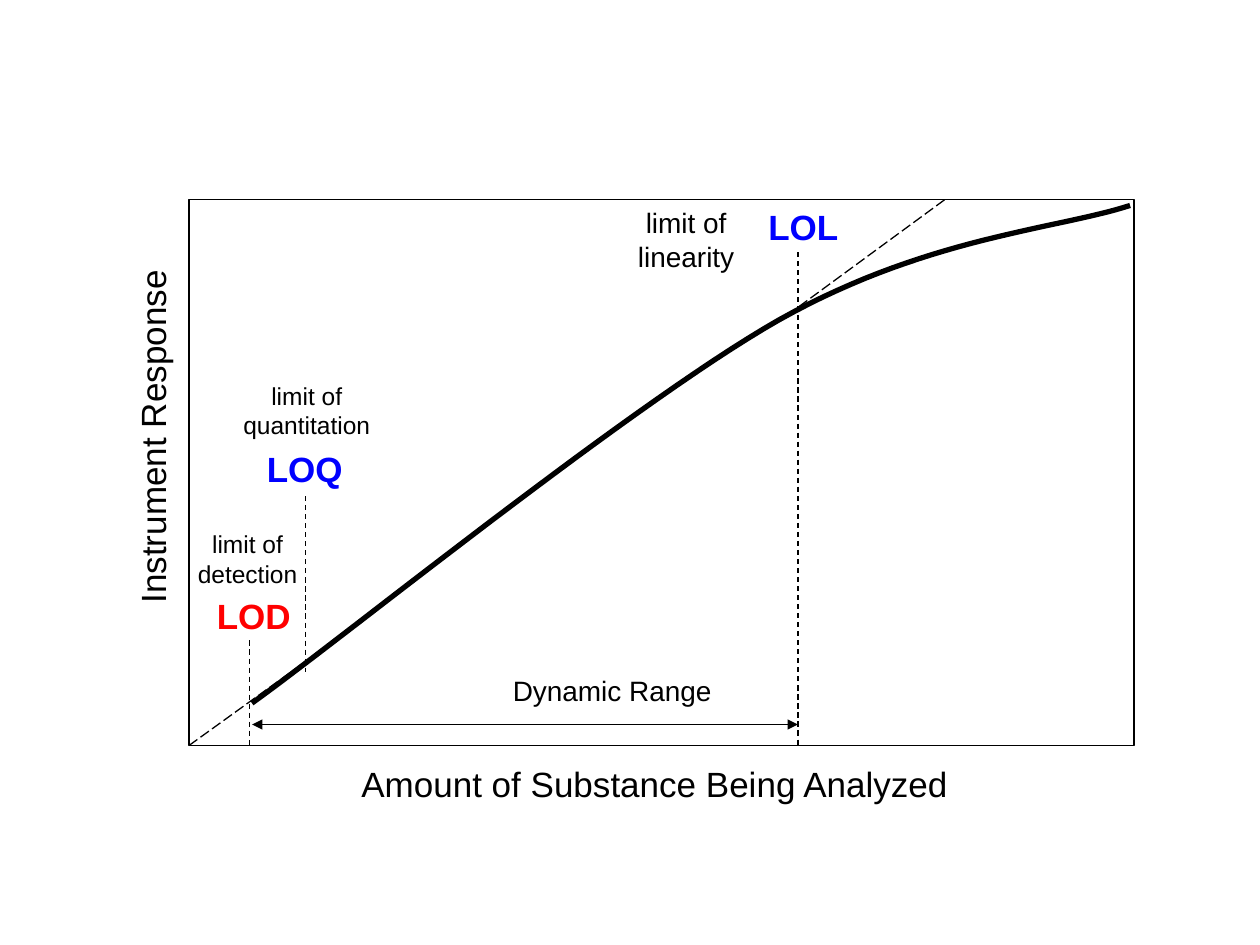
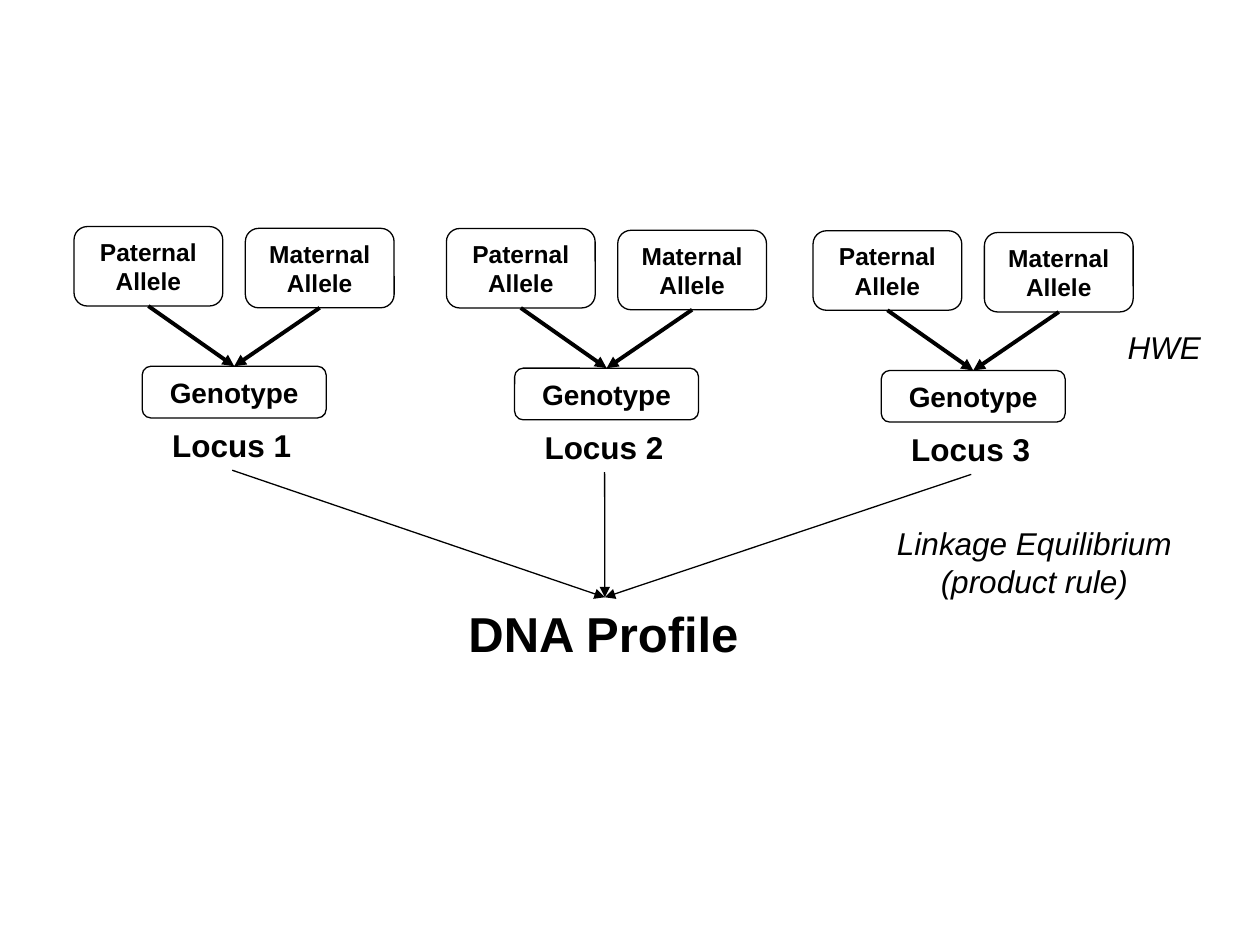
from lxml import etree
from pptx import Presentation
from pptx.dml.color import RGBColor
from pptx.enum.dml import MSO_LINE
from pptx.enum.shapes import MSO_CONNECTOR, MSO_SHAPE
from pptx.enum.text import MSO_ANCHOR, MSO_AUTO_SIZE, PP_ALIGN
from pptx.oxml.ns import qn
from pptx.util import Pt

RECTANGLE = MSO_SHAPE.RECTANGLE
ROUNDED = MSO_SHAPE.ROUNDED_RECTANGLE
STRAIGHT = MSO_CONNECTOR.STRAIGHT
DASH = MSO_LINE.DASH
LONG_DASH = MSO_LINE.LONG_DASH
LEFT, CENTER = PP_ALIGN.LEFT, PP_ALIGN.CENTER
MIDDLE = MSO_ANCHOR.MIDDLE
FIT = MSO_AUTO_SIZE.SHAPE_TO_FIT_TEXT
TOP_SIDE, BOTTOM_SIDE = 0, 2

BLACK, WHITE, BLUE, RED = "000000", "FFFFFF", "0000FF", "FF0000"
BLANK_LAYOUT = 6


def color(hex_value):
    return RGBColor.from_string(hex_value)


def bezier(start, first, second, end, steps=30):
    for step in range(1, steps + 1):
        t = step / steps
        weights = ((1 - t) ** 3, 3 * t * (1 - t) ** 2, 3 * t * t * (1 - t), t ** 3)
        points = (start, first, second, end)
        yield tuple(sum(w * point[axis] for w, point in zip(weights, points))
                    for axis in (0, 1))


class Diagram:
    font = "Arial"
    thin = 0.75

    def __init__(self):
        self.presentation = Presentation()
        self.presentation.slide_width = Pt(720)
        self.presentation.slide_height = Pt(540)
        self.slide = None

    def new_slide(self):
        layout = self.presentation.slide_layouts[BLANK_LAYOUT]
        self.slide = self.presentation.slides.add_slide(layout)

    def set_text(self, shape, text, size, ink=BLACK, bold=False, italic=False, wrap=True):
        text_frame = shape.text_frame
        text_frame.text = text
        text_frame.word_wrap = wrap
        text_frame.auto_size = FIT
        paragraph = text_frame.paragraphs[0]
        paragraph.alignment = CENTER if wrap else LEFT
        for run in paragraph.runs:
            run.font.name = self.font
            run.font.size = Pt(size)
            run.font.bold = bold
            run.font.italic = italic
            run.font.color.rgb = color(ink)

    def label(self, text, left, top, width, height, size, wrap=False, **style):
        shape = self.slide.shapes.add_textbox(Pt(left), Pt(top), Pt(width), Pt(height))
        self.set_text(shape, text, size, wrap=wrap, **style)
        return shape

    def outline(self, shape, weight):
        shape.shadow.inherit = False
        shape.fill.background()
        shape.line.color.rgb = color(BLACK)
        shape.line.width = Pt(weight)

    def box(self, kind, left, top, width, height):
        shape = self.slide.shapes.add_shape(kind, Pt(left), Pt(top), Pt(width), Pt(height))
        self.outline(shape, self.thin)
        return shape

    def rounded_box(self, text, left, top, width, height, size):
        shape = self.box(ROUNDED, left, top, width, height)
        self.set_text(shape, text, size, bold=True)
        shape.text_frame.vertical_anchor = MIDDLE
        return shape

    def curve(self, points, weight):
        builder = self.slide.shapes.build_freeform(*map(Pt, points[0]))
        builder.add_line_segments([(Pt(x), Pt(y)) for x, y in points[1:]], close=False)
        self.outline(builder.convert_to_shape(), weight)

    def line(self, start, end, weight=thin, dash=None, arrows=()):
        connector = self.slide.shapes.add_connector(
            STRAIGHT, *map(Pt, start), *map(Pt, end))
        connector.line.color.rgb = color(BLACK)
        connector.line.width = Pt(weight)
        if dash is not None:
            connector.line.dash_style = dash
        properties = connector._element.spPr
        for arrow in arrows:
            etree.SubElement(properties.find(qn("a:ln")), qn(arrow), type="triangle")
        etree.SubElement(properties, qn("a:effectLst"))
        return connector

    def arrow_down(self, source, target, weight=thin):
        connector = self.line((0, 0), (0, 0), weight, arrows=("a:tailEnd",))
        connector.begin_connect(source, BOTTOM_SIDE)
        connector.end_connect(target, TOP_SIDE)


def build_response_slide(diagram):
    diagram.new_slide()
    plot_left, plot_top, plot_width, plot_height = 108, 114, 540, 312
    plot_bottom = plot_top + plot_height
    detection_x, quantitation_x, linearity_x = 142.5, 174.6, 456

    diagram.box(RECTANGLE, plot_left, plot_top, plot_width, plot_height)
    start, knee, end = (144, 401.8), (445, 182.9), (645.8, 117.4)
    diagram.curve([start,
                   *bezier(start, (194.4, 365.8), (361.4, 230.4), knee),
                   *bezier(knee, (529.2, 135.4), (604.1, 131), end)], 3)
    diagram.line((plot_left, plot_bottom), (quantitation_x, 378), dash=LONG_DASH)
    diagram.line((450, 180), (540, plot_top), dash=LONG_DASH)

    axis_title = diagram.label("Instrument Response", -15.8, 233.3, 205.9, 31.5, 20)
    axis_title.rotation = 270
    amount = diagram.label("Amount of Substance Being Analyzed", 199.4, 432, 352, 31.5, 20)
    amount.fill.solid()
    amount.fill.fore_color.rgb = color(WHITE)

    diagram.label("Dynamic Range", 286, 381.6, 134.6, 26.6, 16)
    diagram.line((144, 414), (linearity_x, 414), arrows=("a:headEnd", "a:tailEnd"))

    diagram.label("LOL", 432, 114, 54.7, 31.5, 20, ink=BLUE, bold=True)
    diagram.label("LOD", 116.8, 336, 56.9, 31.5, 20, ink=RED, bold=True)
    quantitation = diagram.label("LOQ", 145.4, 252, 58.4, 31.5, 20, ink=BLUE, bold=True)
    diagram.label("limit of linearity", 350, 114, 84.2, 46, 16, wrap=True)
    diagram.label("limit of detection", 96.5, 299, 90, 41, 14, wrap=True)
    diagram.label("limit of quantitation", 130.3, 214, 90, 41, 14, wrap=True)

    diagram.line((linearity_x, 144), (linearity_x, plot_bottom), dash=DASH)
    diagram.line((detection_x, 366), (detection_x, plot_bottom), dash=DASH)
    marker = diagram.line((quantitation_x, 282), (quantitation_x, 384), dash=DASH)
    marker.begin_connect(quantitation, BOTTOM_SIDE)


def add_locus(diagram, number, left, top):
    paternal = diagram.rounded_box("Paternal Allele", left, top, 85, 45.4, 14)
    maternal = diagram.rounded_box("Maternal Allele", left + 97.9, top + 1, 85, 45.4, 14)
    genotype = diagram.rounded_box("Genotype", left + 39, top + 79.8, 105.1, 29.5, 16)
    for allele in (maternal, paternal):
        diagram.arrow_down(allele, genotype, 2.25)
    return diagram.label(f"Locus {number}", left + 49, top + 110.4, 82.8, 28.8, 18, bold=True)


def build_profile_slide(diagram):
    diagram.new_slide()
    profile = diagram.label("DNA Profile", 260.6, 341.3, 170, 41, 28, bold=True)
    corners = ((42.3, 129.5), (255.1, 130.6), (464.6, 131.9))
    for number, (left, top) in enumerate(corners, 1):
        locus = add_locus(diagram, number, left, top)
        diagram.arrow_down(locus, profile)
    diagram.label("HWE", 637.2, 183.8, 56.2, 28.8, 18, italic=True)
    diagram.label("Linkage Equilibrium (product rule)", 487.4, 296, 207.4, 50.4, 18,
                  wrap=True, italic=True)


def main():
    diagram = Diagram()
    build_response_slide(diagram)
    build_profile_slide(diagram)
    diagram.presentation.save("out.pptx")


if __name__ == "__main__":
    main()
